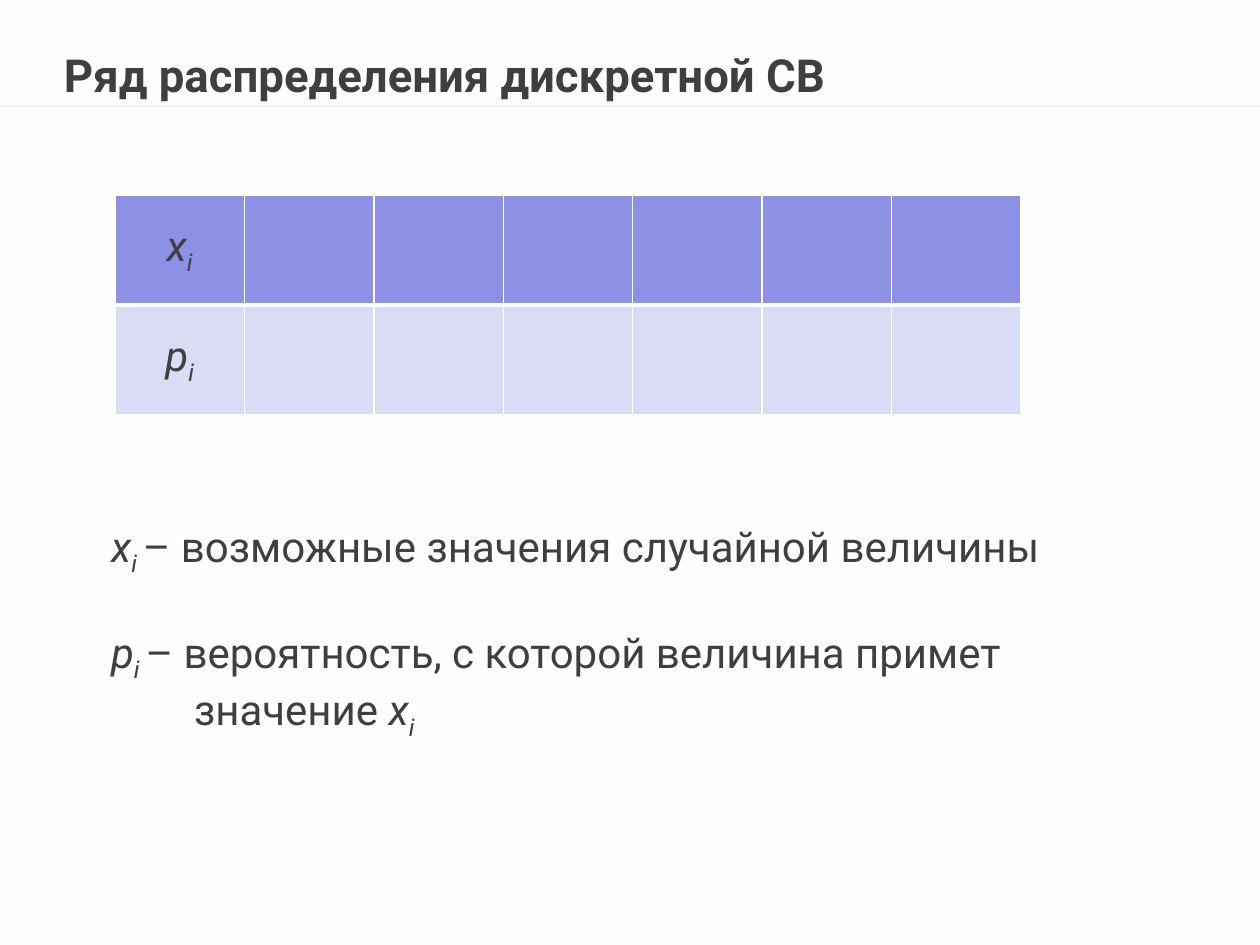
"""Build the slide on the distribution series of a discrete random variable."""
from dataclasses import dataclass

from lxml.etree import SubElement
from pptx import Presentation
from pptx.dml.color import RGBColor
from pptx.enum.shapes import MSO_CONNECTOR as Connector, MSO_SHAPE as Shape
from pptx.enum.text import MSO_ANCHOR as Anchor, MSO_AUTO_SIZE as AutoSize, PP_ALIGN as Align
from pptx.oxml import parse_xml
from pptx.oxml.ns import nsdecls, qn
from pptx.util import Emu, Pt

PX = 914400 / 126
FONT = "Roboto"
COLORS = {
    "background": "FEFEFE",
    "white": "FFFFFF",
    "rule": "7F7F7F",
    "text": "3F3F3F",
    "header": "8C91E6",
    "body": "DADCF5",
}


@dataclass(frozen=True)
class Piece:
    text: str
    italic: bool = False
    subscript: bool = False
    bold: bool = False
    size: int = 24


@dataclass(frozen=True)
class Line:
    pieces: list[Piece]
    before: int = 0
    indent: int = 0


@dataclass(frozen=True)
class Row:
    symbol: str
    fill: str
    bottom: int


def px(length: int) -> Emu:
    return Emu(round(length * PX))


def color(name: str) -> RGBColor:
    return RGBColor.from_string(COLORS[name])


def variable(symbol: str, gap: str = "") -> list[Piece]:
    return [Piece(symbol, italic=True), Piece("i" + gap, italic=True, subscript=True)]


def add_pieces(paragraph, pieces: list[Piece]) -> None:
    for piece in pieces:
        run = paragraph.add_run()
        run.text = piece.text
        run.font.name = FONT
        run.font.size = Pt(piece.size)
        run.font.bold = piece.bold
        run.font.italic = piece.italic
        run.font.color.rgb = color("text")
        if piece.subscript:
            run.font._element.set("baseline", "-25000")


def clear_margins(frame) -> None:
    frame.margin_left = frame.margin_top = frame.margin_right = frame.margin_bottom = 0
    frame.word_wrap = True
    frame.auto_size = AutoSize.NONE


def set_alpha(shape, percent: int) -> None:
    for fill_color in shape._element.spPr.iter(qn("a:srgbClr")):
        SubElement(fill_color, qn("a:alpha")).set("val", str(percent * 1000))


def add_header_band(slide, width: int, height: int) -> None:
    band = slide.shapes.add_shape(Shape.RECTANGLE, 0, 0, px(width), px(height))
    band.shadow.inherit = False
    band.fill.solid()
    band.fill.fore_color.rgb = color("white")
    band.line.fill.background()
    set_alpha(band, 50)
    rule = slide.shapes.add_connector(Connector.STRAIGHT, 0, px(height), px(width), px(height))
    rule.line.color.rgb = color("rule")
    rule.line.width = Pt(0.75)
    set_alpha(rule, 10)
    SubElement(rule._element.spPr, qn("a:effectLst"))


def add_title(slide, text: str) -> None:
    title = slide.shapes.title
    slide.shapes._spTree.append(title._element)
    title.left, title.top, title.width, title.height = px(64), px(26), px(1111), px(106)
    frame = title.text_frame
    clear_margins(frame)
    frame.vertical_anchor = Anchor.MIDDLE
    paragraph = frame.paragraphs[0]
    paragraph.alignment = Align.LEFT
    paragraph.line_spacing = 0.8
    add_pieces(paragraph, [Piece(text, bold=True, size=26)])


def set_borders(cell, bottom: int) -> None:
    properties = cell._tc.get_or_add_tcPr()
    for index, (side, width) in enumerate([("L", 1), ("R", 1), ("T", 1), ("B", bottom)]):
        properties.insert(index, parse_xml(
            f'<a:ln{side} {nsdecls("a")} w="{Pt(width)}"><a:solidFill>'
            f'<a:srgbClr val="{COLORS["white"]}"/></a:solidFill></a:ln{side}>'))


def add_series_table(slide, rows: list[Row], columns: int) -> None:
    frame = slide.shapes.add_table(len(rows), columns, px(115), px(195), px(906), px(220))
    table = frame.table
    table.first_row = table.horz_banding = False
    for row, table_row in zip(rows, table.rows):
        for cell in table_row.cells:
            cell.fill.solid()
            cell.fill.fore_color.rgb = color(row.fill)
            set_borders(cell, row.bottom)
        symbol_cell = table_row.cells[0]
        symbol_cell.vertical_anchor = Anchor.MIDDLE
        paragraph = symbol_cell.text_frame.paragraphs[0]
        paragraph.alignment = Align.CENTER
        add_pieces(paragraph, variable(row.symbol))


def add_legend(slide, lines: list[Line]) -> None:
    frame = slide.shapes.add_textbox(px(111), px(520), px(1065), px(260)).text_frame
    clear_margins(frame)
    for index, line in enumerate(lines):
        paragraph = frame.add_paragraph() if index else frame.paragraphs[0]
        if line.before:
            paragraph.space_before = Pt(line.before)
        if line.indent:
            paragraph._p.get_or_add_pPr().set("marL", str(px(line.indent)))
        add_pieces(paragraph, line.pieces)


def main() -> None:
    presentation = Presentation()
    presentation.slide_width, presentation.slide_height = px(1260), px(945)
    slide = presentation.slides.add_slide(presentation.slide_layouts[5])
    slide.background.fill.solid()
    slide.background.fill.fore_color.rgb = color("background")
    add_header_band(slide, 1260, 106)
    add_title(slide, "Ряд распределения дискретной СВ")
    add_series_table(slide, [Row("x", "header", 3), Row("p", "body", 1)], 7)
    add_legend(slide, [
        Line(variable("x", " ") + [Piece("– возможные значения случайной величины")]),
        Line(variable("p", " ") + [Piece("– вероятность, с которой величина примет")], before=28),
        Line([Piece("значение ")] + variable("x"), indent=83),
    ])
    presentation.save("out.pptx")


if __name__ == "__main__":
    main()
